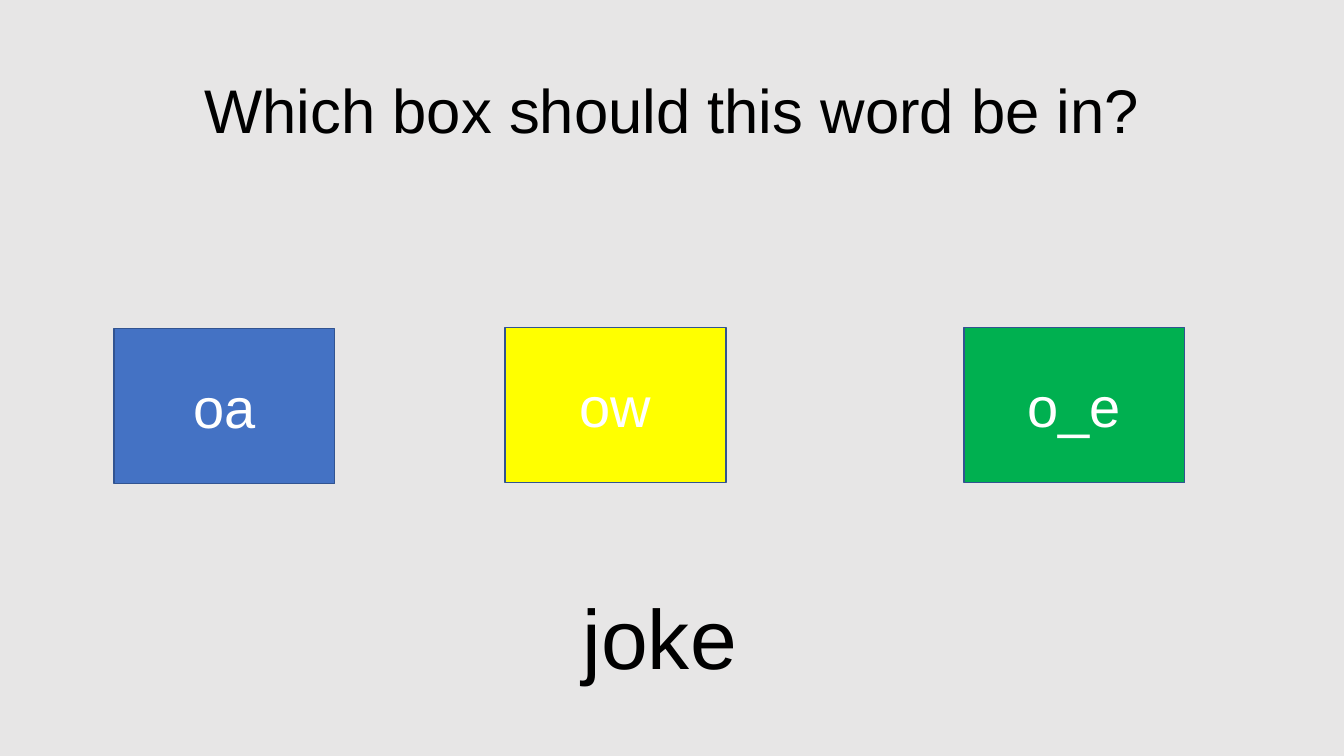
import dataclasses
import pptx
import pptx.util
import pptx.dml.color
import pptx.enum.shapes
import pptx.enum.text

Inches = pptx.util.Inches
Pt = pptx.util.Pt
Align = pptx.enum.text.PP_ALIGN
Anchor = pptx.enum.text.MSO_ANCHOR


@dataclasses.dataclass
class Theme:
    font: str = "Arial"
    back: str = "E7E6E6"
    ink: str = "000000"
    pale: str = "FFFFFF"
    edge: str = "325491"
    blue: str = "4472C4"
    yellow: str = "FFFF00"
    green: str = "00B050"
    title: int = 44
    label: int = 40
    word: int = 60


class Page:
    def __init__(self, deck, theme):
        self.theme = theme
        self.slide = deck.slides.add_slide(deck.slide_layouts[5])
        self.paint(self.slide.background.fill, theme.back)

    def paint(self, fill, color):
        fill.solid()
        fill.fore_color.rgb = pptx.dml.color.RGBColor.from_string(color)

    def letter(self, shape, text, size, color, align, anchor):
        frame = shape.text_frame
        frame.word_wrap = True
        frame.vertical_anchor = anchor
        para = frame.paragraphs[0]
        para.alignment = align
        run = para.add_run()
        run.text = text
        run.font.name = self.theme.font
        run.font.size = Pt(size)
        self.paint(run.font.fill, color)
        return para

    def title(self, text, left, top, width, height):
        shape = self.slide.shapes.title
        shape.left, shape.top = Inches(left), Inches(top)
        shape.width, shape.height = Inches(width), Inches(height)
        para = self.letter(shape, text, self.theme.title, self.theme.ink,
                           Align.CENTER, Anchor.MIDDLE)
        para.line_spacing = 0.9

    def box(self, text, fill, left, top, width, height):
        shape = self.slide.shapes.add_shape(
            pptx.enum.shapes.MSO_SHAPE.RECTANGLE,
            Inches(left), Inches(top), Inches(width), Inches(height))
        shape.shadow.inherit = False
        self.paint(shape.fill, fill)
        self.paint(shape.line.fill, self.theme.edge)
        shape.line.width = Pt(1)
        self.letter(shape, text, self.theme.label, self.theme.pale,
                    Align.CENTER, Anchor.MIDDLE)

    def word(self, text, left, top, width, height):
        shape = self.slide.shapes.add_textbox(
            Inches(left), Inches(top), Inches(width), Inches(height))
        self.letter(shape, text, self.theme.word, self.theme.ink,
                    Align.LEFT, Anchor.TOP)
        shape.text_frame.auto_size = pptx.enum.text.MSO_AUTO_SIZE.SHAPE_TO_FIT_TEXT


def main():
    deck = pptx.Presentation()
    deck.slide_width, deck.slide_height = Inches(13.33), Inches(7.5)
    theme = Theme()
    page = Page(deck, theme)
    page.title("Which box should this word be in?", 0.92, 0.4, 11.5, 1.45)
    for text, fill, left, top in (
        ("oa", theme.blue, 1.13, 3.26),
        ("ow", theme.yellow, 5.01, 3.25),
        ("o_e", theme.green, 9.56, 3.25),
    ):
        page.box(text, fill, left, top, 2.19, 1.54)
    page.word("joke", 5.68, 5.76, 2.42, 1.11)
    deck.save("out.pptx")


if __name__ == "__main__":
    main()
